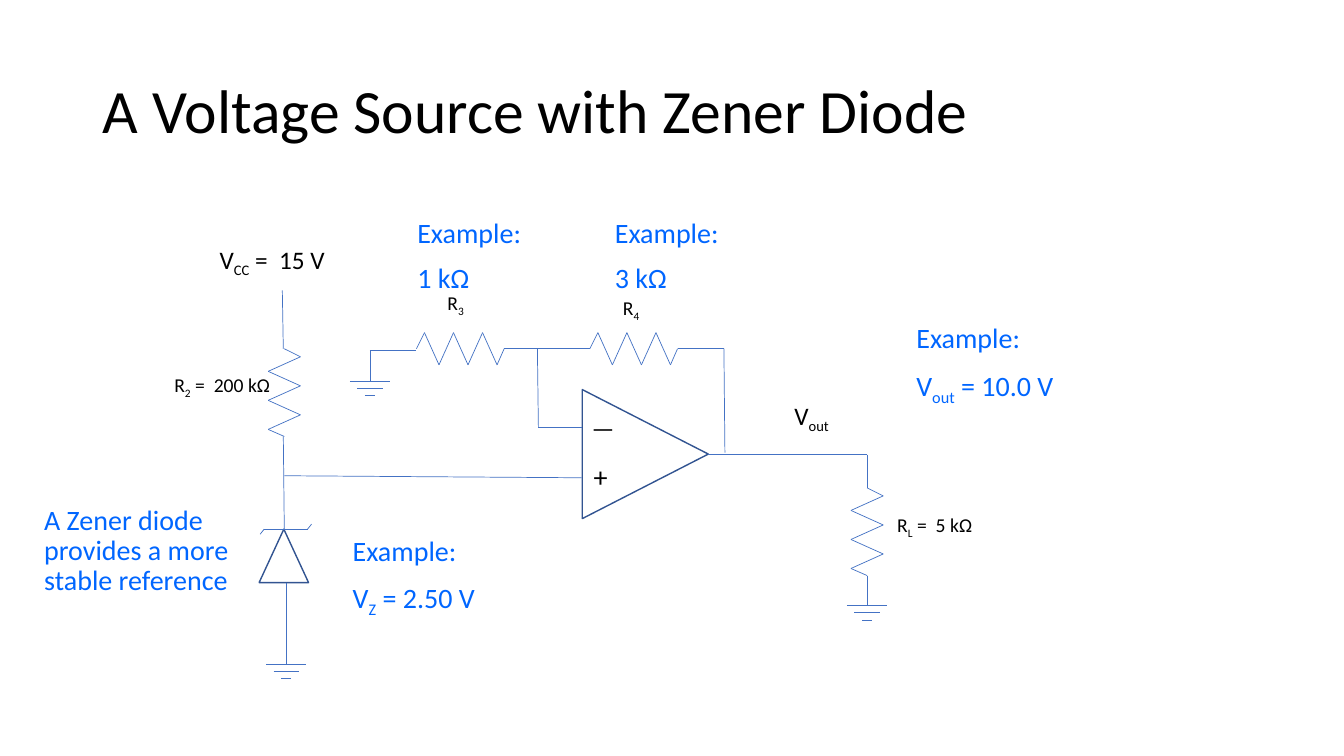
from itertools import pairwise

from lxml.etree import SubElement
from pptx import Presentation
from pptx.dml.color import RGBColor
from pptx.enum.shapes import MSO_CONNECTOR, MSO_SHAPE
from pptx.enum.text import MSO_ANCHOR
from pptx.oxml.ns import qn
from pptx.util import Inches, Pt

COLORS = {"ink": "000000", "note": "0066FF", "wire": "4472C4", "outline": "325491"}
FONT = "Calibri"


def wire(slide, *points):
    for start, end in pairwise(points):
        segment = slide.shapes.add_connector(
            MSO_CONNECTOR.STRAIGHT, *map(Inches, (*start, *end)))
        segment.line.color.rgb = RGBColor.from_string(COLORS["wire"])
        segment.line.width = Pt(0.5)
        SubElement(segment._element.spPr, qn("a:effectLst"))


def resistor(slide, x, y, vertical):
    along = [0] + [0.08 + 0.144 * peak for peak in range(6)] + [0.87]
    across = [0] + [0.16, -0.16] * 3 + [0]
    if vertical:
        points = [(x + side, y + step) for step, side in zip(along, across)]
    else:
        points = [(x + step, y - side) for step, side in zip(along, across)]
    wire(slide, *points)


def ground(slide, x, y):
    for row, half_width in enumerate((0.2, 0.125, 0.05)):
        level = y + 0.07 * row
        wire(slide, (x - half_width, level), (x + half_width, level))


def triangle(slide, left, top, width, height, rotation=0):
    symbol = slide.shapes.add_shape(
        MSO_SHAPE.ISOSCELES_TRIANGLE, *map(Inches, (left, top, width, height)))
    symbol.rotation = rotation
    symbol.shadow.inherit = False
    symbol.fill.background()
    symbol.line.color.rgb = RGBColor.from_string(COLORS["outline"])
    symbol.line.width = Pt(1)


def write(paragraph, marked_text, size, color):
    for index, part in enumerate(marked_text.split("_")):
        run = paragraph.add_run()
        run.text = part
        run.font.size = Pt(size)
        run.font.name = FONT
        run.font.color.rgb = RGBColor.from_string(COLORS[color])
        if index % 2:
            run._r.get_or_add_rPr().set("baseline", "-25000")


def label(slide, left, top, width, height, text, size):
    frame = slide.shapes.add_textbox(
        *map(Inches, (left, top, width, height))).text_frame
    frame.word_wrap = True
    write(frame.paragraphs[0], text, size, "ink")
    return frame


def note(slide, left, top, width, height, *lines):
    frame = slide.shapes.add_textbox(
        *map(Inches, (left, top, width, height))).text_frame
    frame.word_wrap = True
    for index, line in enumerate(lines):
        paragraph = frame.add_paragraph() if index else frame.paragraphs[0]
        paragraph.line_spacing = 0.9
        paragraph.space_before = Pt(10)
        write(paragraph, line, 20, "note")


def draw_circuit(slide):
    for x, y in ((2.82, 3.46), (8.6, 4.84)):
        resistor(slide, x, y, vertical=True)
    for x, y in ((4.13, 3.46), (5.85, 3.46)):
        resistor(slide, x, y, vertical=False)
    for x, y in ((2.84, 6.59), (8.6, 6.01), (3.67, 3.78)):
        ground(slide, x, y)

    triangle(slide, 5.76, 3.88, 1.28, 1.25, rotation=90)
    triangle(slide, 2.57, 5.25, 0.49, 0.53)
    wire(slide, (2.58, 5.3), (2.62, 5.25), (3.05, 5.25), (3.09, 5.2))

    wire(slide, (2.8, 2.88), (2.81, 3.46))
    wire(slide, (2.81, 4.33), (2.82, 5.25))
    wire(slide, (2.84, 5.78), (2.84, 6.59))
    wire(slide, (2.82, 4.72), (5.77, 4.74))
    wire(slide, (3.67, 3.78), (3.67, 3.48), (4.13, 3.48))
    wire(slide, (5, 3.46), (5.85, 3.46))
    wire(slide, (5.33, 3.46), (5.34, 4.24), (5.77, 4.24))
    wire(slide, (6.72, 3.46), (7.18, 3.46), (7.19, 4.49))
    wire(slide, (7.02, 4.51), (8.6, 4.51), (8.6, 4.84))
    wire(slide, (8.6, 5.71), (8.6, 6.01))


def add_labels(slide):
    label(slide, 2.08, 2.37, 1.79, 0.4, "V_CC_ =  15 V", 18)
    label(slide, 1.63, 3.65, 1.38, 0.34, "R_2_ =  200 kΩ", 14)
    label(slide, 8.8, 5.04, 1.38, 0.34, "R_L_ =  5 kΩ", 14)
    label(slide, 4.34, 2.84, 0.57, 0.34, "R_3", 14)
    label(slide, 6.08, 2.89, 0.57, 0.34, "R_4", 14)
    label(slide, 7.78, 3.92, 0.65, 0.4, "V_out", 18)
    label(slide, 5.77, 4.04, 0.45, 0.4, "—", 18)
    label(slide, 5.79, 4.51, 0.4, 0.44, "+", 20)


def add_notes(slide):
    note(slide, 0.34, 4.97, 2.13, 1.11,
         "A Zener diode provides a more stable reference")
    note(slide, 3.4, 5.28, 1.9, 1.15, "Example:", "V_Z_ = 2.50 V")
    note(slide, 4.04, 2.13, 1.79, 0.91, "Example:", "1 kΩ")
    note(slide, 6, 2.13, 1.79, 0.91, "Example:", "3 kΩ")
    note(slide, 8.99, 3.17, 1.9, 1.15, "Example:", "V_out_ = 10.0 V")


def main():
    deck = Presentation()
    deck.slide_width = Inches(13.33)
    deck.slide_height = Inches(7.5)
    slide = deck.slides.add_slide(deck.slide_layouts[6])
    title = label(slide, 0.92, 0.4, 11.5, 1.45,
                  "A Voltage Source with Zener Diode", 44)
    title.vertical_anchor = MSO_ANCHOR.MIDDLE
    title.paragraphs[0].line_spacing = 0.9
    draw_circuit(slide)
    add_labels(slide)
    add_notes(slide)
    deck.save("out.pptx")


if __name__ == "__main__":
    main()
